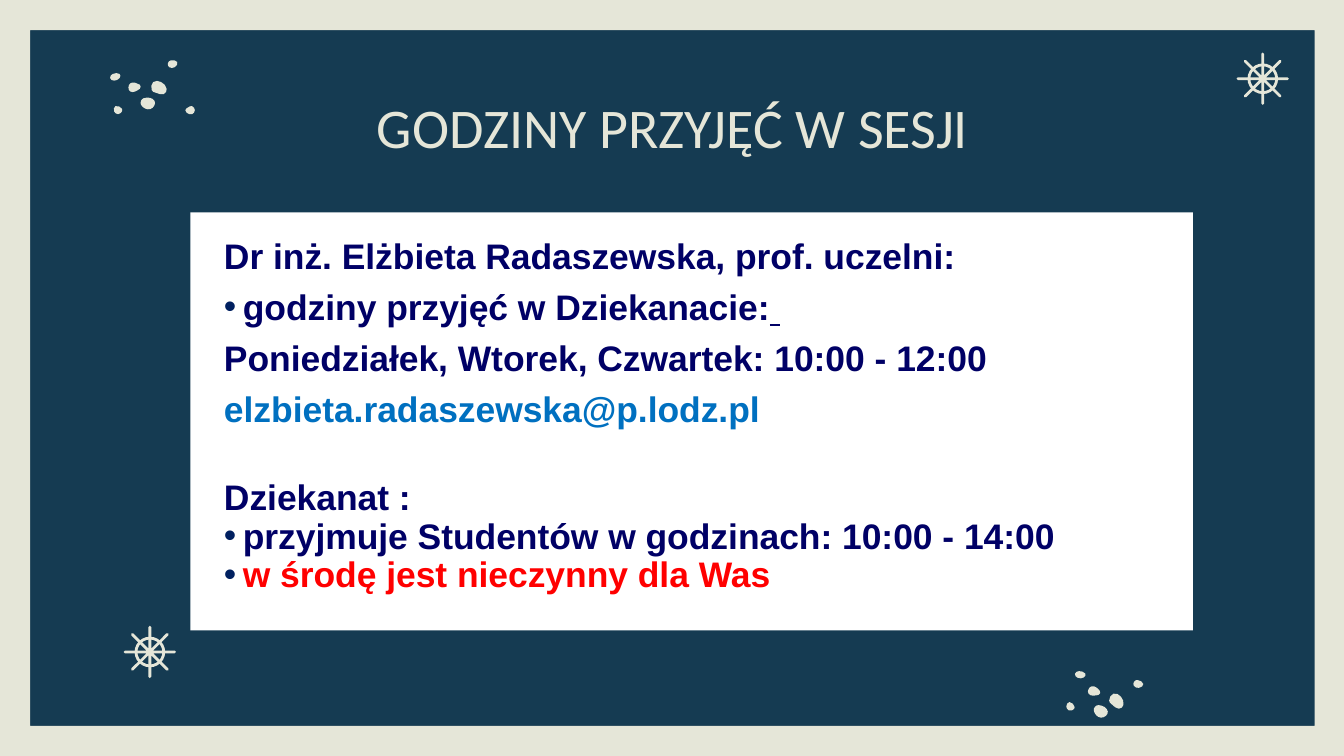
import math
from lxml import etree
from pptx import Presentation
from pptx.dml.color import RGBColor
from pptx.enum import shapes as s, text as t
from pptx.oxml import ns
from pptx.util import Pt

HUES = {"sea": "153B52", "sand": "E5E6D8", "white": "FFFFFF", "navy": "000066",
        "dot": "002060", "blue": "0070C0", "red": "FF0000"}

# Pebble anchors, in points around the middle of the cluster
STONES = [
    [(-4, 1.1), (-3.2, -3.2), (1.1, -3.2), (4, 0.4), (2.5, 3.2), (-1.8, 2.5)],
    [(-8.3, 5.4), (-2.5, 6.8), (-4.7, 11.2), (-9.7, 9)],
    [(-15.5, -2.5), (-10.4, -1.8), (-10.4, 0.4), (-15.5, 1.8)],
    [(-19.8, 11.2), (-20.5, 13.3), (-22, 14), (-24.1, 12.6), (-23.4, 9.7)],
    [(-24.8, -7.6), (-21.2, -7.6), (-21.2, -5.4), (-24.1, -4), (-26.3, -5.4)],
    [(15.5, 10.4), (17.6, 9.7), (19.1, 11.9), (17.6, 14), (14.8, 13.3), (14, 11.9)],
    [(8.3, -11.2), (5.4, -11.2), (4.7, -13.3), (6.1, -14.8), (9.7, -14)],
]

# Body lines: kind, line spacing, space before, runs of (text, hue)
LINES = [
    ("plain", 1.2, 0, [("Dr inż. Elżbieta Radaszewska, prof. uczelni:", "navy")]),
    ("bullet", 1.2, 0, [("godziny przyjęć w Dziekanacie:", "navy"), (" ", "navy")]),
    ("plain", 1.2, 0, [("Poniedziałek, Wtorek, Czwartek: 10:00 - 12:00", "navy"),
                       ("\n", "navy"), ("elzbieta.radaszewska@p.lodz.pl", "blue")]),
    ("plain", 0.9, 27, [("Dziekanat :", "navy")]),
    ("bullet", 0.9, 0, [("przyjmuje Studentów w godzinach: 10:00 - 14:00", "navy")]),
    ("bullet", 0.9, 0, [("w środę jest nieczynny dla Was", "red")]),
]


def rgb(hue):
    return RGBColor.from_string(HUES[hue])


def paint(shape, fill=None, line=None):
    shape.shadow.inherit = False
    if fill:
        shape.fill.solid()
        shape.fill.fore_color.rgb = rgb(fill)
    else:
        shape.fill.background()
    if line:
        shape.line.color.rgb = rgb(line)
        shape.line.width = Pt(1.5)
    else:
        shape.line.fill.background()


def add(slide, kind, box):
    return slide.shapes.add_shape(kind, *map(Pt, box))


def place(shape, box):
    shape.left, shape.top, shape.width, shape.height = map(Pt, box)
    frame = shape.text_frame
    frame.word_wrap = True
    frame.auto_size = t.MSO_AUTO_SIZE.NONE
    frame.vertical_anchor = t.MSO_ANCHOR.TOP
    frame.margin_left = frame.margin_right = Pt(7.2)
    frame.margin_top = frame.margin_bottom = Pt(7.2)
    return frame


def write(para, words, face, size, hue, bold=False):
    run = para.add_run()
    run.text = words
    font = run.font
    font.name, font.size, font.bold = face, Pt(size), bold
    font.color.rgb = rgb(hue)
    return run


def border(slide, box):
    frame = add(slide, s.MSO_SHAPE.FRAME, box)
    frame.adjustments[0] = 0.041
    paint(frame, "sand")


def wheel(slide, box):
    left, top, side, _ = box
    spokes = add(slide, s.MSO_SHAPE.STAR_8_POINT, box)
    spokes.adjustments[0] = 0
    paint(spokes, "sand", "sand")
    rim = side * 0.56
    gap = (side - rim) / 2
    paint(add(slide, s.MSO_SHAPE.OVAL, (left + gap, top + gap, rim, rim)), None, "sand")


def curve(shape):
    """Turn the straight sides of a closed outline into smooth curves."""
    track = shape._element.find(".//" + ns.qn("a:path"))
    knots = [(int(p.get("x")), int(p.get("y"))) for p in track.iter(ns.qn("a:pt"))]
    count = len(knots)
    for side in track.findall(ns.qn("a:lnTo")):
        track.remove(side)
    close = track.find(ns.qn("a:close"))
    for i in range(count):
        a, b, c, d = (knots[(i + k) % count] for k in (-1, 0, 1, 2))
        reach = 0.36 * math.dist(b, c)
        out, back = reach / math.dist(a, c), reach / math.dist(b, d)
        bend = etree.Element(ns.qn("a:cubicBezTo"))
        for x, y in ((b[0] + (c[0] - a[0]) * out, b[1] + (c[1] - a[1]) * out),
                     (c[0] - (d[0] - b[0]) * back, c[1] - (d[1] - b[1]) * back), c):
            etree.SubElement(bend, ns.qn("a:pt"), x=str(round(x)), y=str(round(y)))
        close.addprevious(bend)


def pebbles(slide, mid, turn):
    cos, sin = math.cos(math.radians(turn)), math.sin(math.radians(turn))
    for stone in STONES:
        knots = [(Pt(mid[0] + x * cos - y * sin), Pt(mid[1] + x * sin + y * cos))
                 for x, y in stone]
        build = slide.shapes.build_freeform(*knots[0])
        build.add_line_segments(knots[1:], close=True)
        pebble = build.convert_to_shape()
        curve(pebble)
        paint(pebble, "sand")


def heading(slide, box):
    para = place(slide.shapes.title, box).paragraphs[0]
    para.alignment = t.PP_ALIGN.CENTER
    write(para, "GODZINY PRZYJĘĆ W SESJI", "Calibri", 30, "sand")


def mark(para, kind):
    """Set the indents and the bullet of a body line."""
    props = para._p.get_or_add_pPr()
    left, hang = (20.9, -10.1) if kind == "bullet" else (10.8, 0)
    props.set("marL", str(Pt(left)))
    props.set("indent", str(Pt(hang)))
    if kind == "bullet":
        tint = etree.SubElement(props, ns.qn("a:buClr"))
        etree.SubElement(tint, ns.qn("a:srgbClr"), val=HUES["dot"])
        etree.SubElement(props, ns.qn("a:buFont"), typeface="Arial")
        etree.SubElement(props, ns.qn("a:buChar"), char="•")
    else:
        etree.SubElement(props, ns.qn("a:buNone"))


def hours(slide, box):
    card = slide.placeholders[1]
    frame = place(card, box)
    card.fill.solid()
    card.fill.fore_color.rgb = rgb("white")
    for i, (kind, pitch, before, runs) in enumerate(LINES):
        para = frame.add_paragraph() if i else frame.paragraphs[0]
        para.alignment = t.PP_ALIGN.LEFT
        para.line_spacing = pitch
        para.space_before, para.space_after = Pt(before), Pt(0)
        mark(para, kind)
        for words, hue in runs:
            if words == "\n":
                para.add_line_break()
                continue
            run = write(para, words, "Arial", 19, hue, True)
            if words == " ":
                run.font.underline = True


def main():
    deck = Presentation()
    deck.slide_width, deck.slide_height = Pt(720), Pt(405)
    slide = deck.slides.add_slide(deck.slide_layouts[1])
    slide.background.fill.solid()
    slide.background.fill.fore_color.rgb = rgb("sea")

    # Decoration
    border(slide, (-0.5, -0.5, 721.4, 406))
    for left, top in ((67, 336), (663.2, 28.9)):
        wheel(slide, (left, top, 26.6, 26.6))
    pebbles(slide, (85.3, 47.2), 0)
    pebbles(slide, (598.3, 375.8), 21.8)

    # Text
    heading(slide, (56.9, 42.5, 607, 45.4))
    hours(slide, (102, 113.8, 537.1, 223.9))
    deck.save("out.pptx")


if __name__ == "__main__":
    main()
